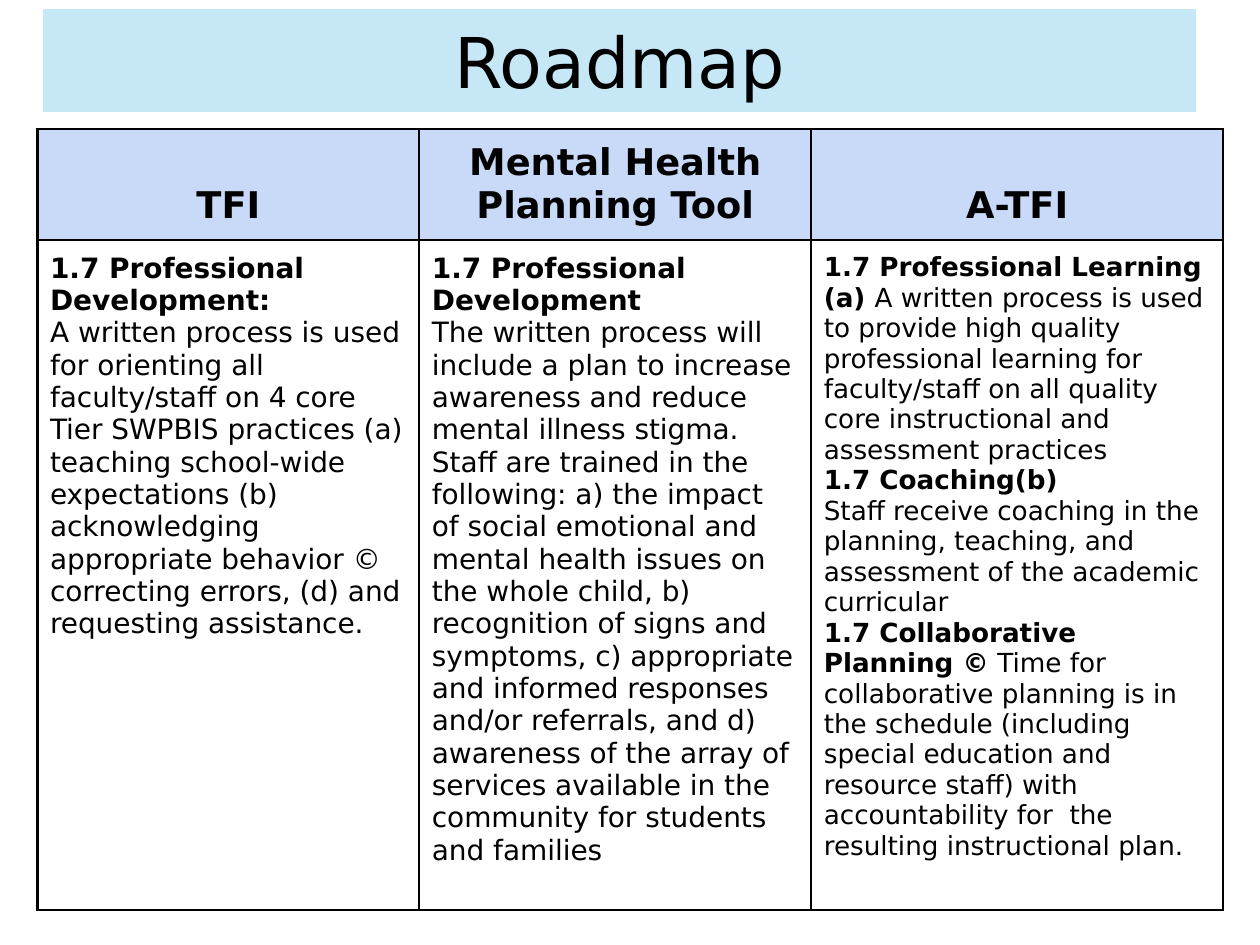
from lxml import etree
from pptx import Presentation
from pptx.dml.color import RGBColor
from pptx.enum.text import MSO_ANCHOR, PP_ALIGN
from pptx.oxml.ns import qn
from pptx.util import Pt

CENTER, LEFT = PP_ALIGN.CENTER, PP_ALIGN.LEFT
TOP, MIDDLE, BOTTOM = MSO_ANCHOR.TOP, MSO_ANCHOR.MIDDLE, MSO_ANCHOR.BOTTOM

THEME = {
    "font": "DejaVu Sans",
    "ink": "000000",
    "paper": "FFFFFF",
    "band": "A9DCF2",
    "head": "C9DAF8",
    "title_size": 40,
    "head_size": 21,
    "body_size": 16,
    "small_size": 15,
}


def write(para, text, size, bold=False, align=LEFT):
    para.alignment = align
    run = para.add_run()
    run.text = text
    font = run.font
    font.name, font.size, font.bold = THEME["font"], Pt(size), bold
    font.color.rgb = RGBColor.from_string(THEME["ink"])


def border(cell, width):
    props = cell._tc.get_or_add_tcPr()
    for spot, side in enumerate(("lnL", "lnR", "lnT", "lnB")):
        line = etree.Element(qn("a:" + side), w=str(Pt(width)))
        fill = etree.SubElement(line, qn("a:solidFill"))
        etree.SubElement(fill, qn("a:srgbClr"), val=THEME["ink"])
        props.insert(spot, line)


# Each column: heading, body size, paragraphs of (text, bold) runs
COLUMNS = [
    ("TFI", THEME["body_size"], [
        [("1.7 Professional Development:", True)],
        [("A written process is used for orienting all faculty/staff on 4 core "
          "Tier SWPBIS practices (a) teaching school-wide expectations (b) "
          "acknowledging appropriate behavior © correcting errors, (d) and "
          "requesting assistance.", False)],
    ]),
    ("Mental Health Planning Tool", THEME["body_size"], [
        [("1.7 Professional Development", True)],
        [("The written process will include a plan to increase awareness and "
          "reduce mental illness stigma. Staff are trained in the following: "
          "a) the impact of social emotional and mental health issues on the "
          "whole child, b) recognition of signs and symptoms, c) appropriate "
          "and informed responses and/or referrals, and d) awareness of the "
          "array of services available in the community for students and "
          "families", False)],
    ]),
    ("A-TFI", THEME["small_size"], [
        [("1.7 Professional Learning (a) ", True),
         ("A written process is used to provide high quality professional "
          "learning for faculty/staff on all quality core instructional and "
          "assessment practices", False)],
        [("1.7 Coaching(b)", True)],
        [("Staff receive coaching in the planning, teaching, and assessment "
          "of the academic curricular", False)],
        [("1.7 Collaborative Planning ©", True),
         (" Time for collaborative planning is in the schedule (including "
          "special education and resource staff) with accountability for  the "
          "resulting instructional plan.", False)],
    ]),
]
WIDTHS = (218.2, 224, 235.4)
HEIGHTS = (63.4, 383)

deck = Presentation()
deck.slide_width, deck.slide_height = Pt(720), Pt(540)
slide = deck.slides.add_slide(deck.slide_layouts[5])

# Title band
title = slide.shapes.title
title.left, title.top, title.width, title.height = Pt(24), Pt(5), Pt(660), Pt(59.5)
title.fill.solid()
title.fill.fore_color.rgb = RGBColor.from_string(THEME["band"])
tint = title._element.spPr.find(qn("a:solidFill")).find(qn("a:srgbClr"))
etree.SubElement(tint, qn("a:alpha"), val="67000")
title.line.color.rgb = RGBColor.from_string(THEME["paper"])
title.line.width = Pt(0.75)
title.text_frame.vertical_anchor = MIDDLE
write(title.text_frame.paragraphs[0], "Roadmap", THEME["title_size"], align=CENTER)

# Table grid
table = slide.shapes.add_table(
    2, len(COLUMNS), Pt(21.4), Pt(73.6), Pt(sum(WIDTHS)), Pt(sum(HEIGHTS))).table
table.first_row = table.horz_banding = False
for col, width in zip(table.columns, WIDTHS):
    col.width = Pt(width)
for row, height in zip(table.rows, HEIGHTS):
    row.height = Pt(height)

# Cell frames
for cell in table.iter_cells():
    cell.margin_left = cell.margin_right = Pt(7.2)
    cell.margin_top = cell.margin_bottom = Pt(7.2)
    cell.vertical_anchor = TOP
    cell.fill.solid()
    cell.fill.fore_color.rgb = RGBColor.from_string(THEME["paper"])
    border(cell, 1.5)

# Cell text
for num, (name, size, paras) in enumerate(COLUMNS):
    head, body = table.cell(0, num), table.cell(1, num)
    head.fill.fore_color.rgb = RGBColor.from_string(THEME["head"])
    head.vertical_anchor = BOTTOM
    write(head.text_frame.paragraphs[0], name, THEME["head_size"], bold=True, align=CENTER)
    frame = body.text_frame
    for spot, runs in enumerate(paras):
        para = frame.add_paragraph() if spot else frame.paragraphs[0]
        for text, bold in runs:
            write(para, text, size, bold=bold)

deck.save("out.pptx")
